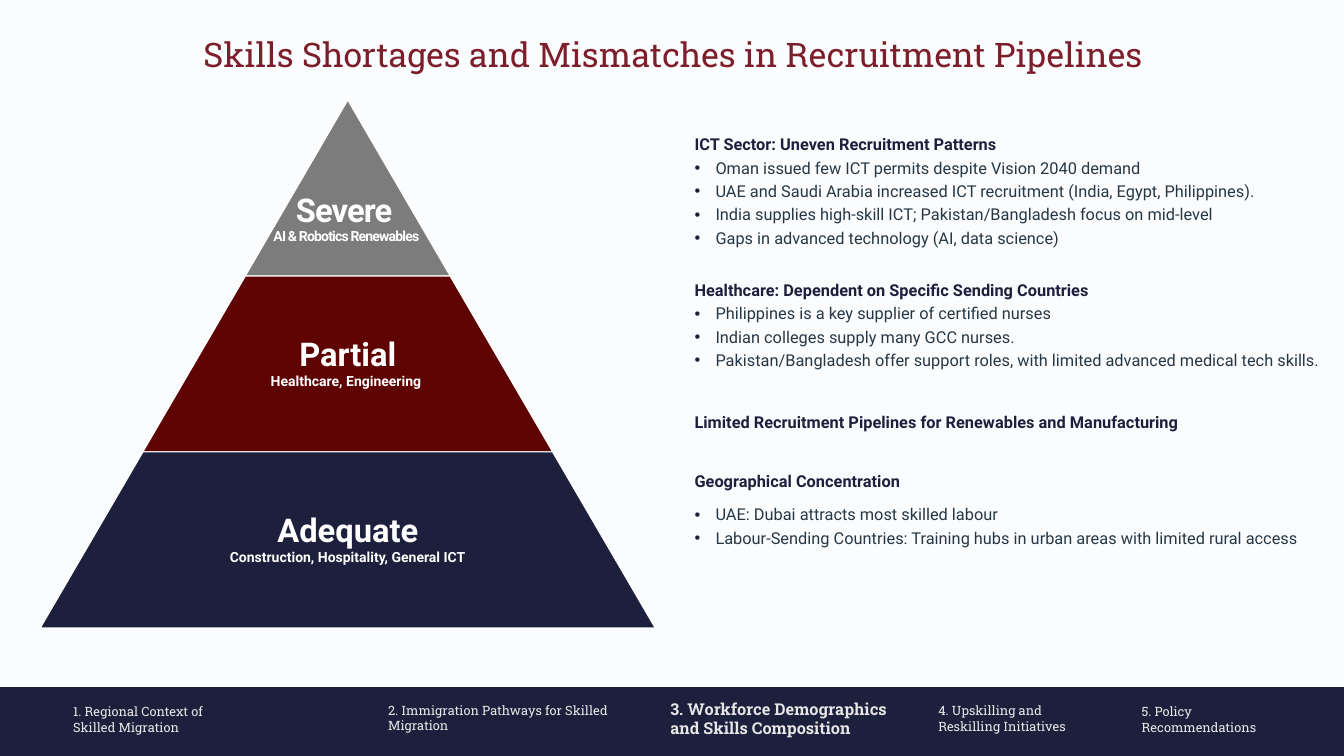
import dataclasses
from typing import Any

import pptx
import pptx.dml.color
import pptx.enum.shapes
import pptx.enum.text
import pptx.oxml
import pptx.oxml.ns
import pptx.util

Pt = pptx.util.Pt
ALIGN = pptx.enum.text.PP_ALIGN
ANCHOR = pptx.enum.text.MSO_ANCHOR
SHAPE = pptx.enum.shapes.MSO_SHAPE

WIDE, HIGH = pptx.util.Inches(16), pptx.util.Inches(9)
COL, ROW = WIDE / 16, HIGH / 9
SANS, SLAB = "Roboto", "Roboto Slab"
HUES = {
    "page": "FBFCFE", "navy": "1D203C", "title": "7D1E2B", "gray": "7C7C7C",
    "wine": "5E0202", "white": "FFFFFF", "pale": "E7E6E6", "body": "253745",
}


@dataclasses.dataclass
class Box:
    """A place on the grid, in columns and rows."""
    left: float
    top: float
    wide: float
    high: float

    def place(self) -> tuple[int, int, int, int]:
        return (round(self.left * COL), round(self.top * ROW),
                round(self.wide * COL), round(self.high * ROW))


@dataclasses.dataclass
class Style:
    size: float
    hue: str
    font: str = SANS
    bold: bool = False
    track: float = 0


@dataclasses.dataclass
class Step:
    text: str
    box: Box
    now: bool = False


@dataclasses.dataclass
class Tier:
    head: str
    note: str
    hue: str
    share: float = 0.65
    drop: float = 0
    track: float = 0


@dataclasses.dataclass
class Topic:
    head: str
    gap: float
    points: list[str]
    lead: float = 3.2


STEPS = [
    Step("1. Regional Context of \nSkilled Migration", Box(0.87, 8.38, 3.27, 0.38)),
    Step("2. Immigration Pathways for Skilled Migration", Box(4.62, 8.36, 2.88, 0.39)),
    Step("3. Workforce Demographics and Skills Composition",
         Box(7.98, 8.32, 2.7, 0.39), now=True),
    Step("4. Upskilling and Reskilling Initiatives", Box(11.17, 8.37, 1.94, 0.39)),
    Step("5. Policy Recommendations", Box(13.59, 8.38, 1.94, 0.39)),
]
TIERS = [
    Tier("Severe ", "AI & Robotics Renewables ", "gray", share=1, drop=0.75, track=-0.7),
    Tier("Partial", "Healthcare, Engineering ", "wine"),
    Tier("Adequate", "Construction, Hospitality, General ICT", "navy"),
]
TOPICS = [
    Topic("ICT Sector: Uneven Recruitment Patterns", 0, [
        "Oman issued few ICT permits despite Vision 2040 demand",
        "UAE and Saudi Arabia increased ICT recruitment (India, Egypt, Philippines).",
        "India supplies high-skill ICT; Pakistan/Bangladesh focus on mid-level",
        "Gaps in advanced technology (AI, data science)"]),
    Topic("Healthcare: Dependent on Specific Sending Countries", 16.4, [
        "Philippines is a key supplier of certified nurses",
        "Indian colleges supply many GCC nurses.",
        "Pakistan/Bangladesh offer support roles, with limited advanced medical tech skills."]),
    Topic("Limited Recruitment Pipelines for Renewables and Manufacturing", 24.6, []),
    Topic("Geographical Concentration", 21.9, [
        "UAE: Dubai attracts most skilled labour",
        "Labour-Sending Countries: Training hubs in urban areas with limited rural access"],
        lead=11.9),
]
MID, PEAK, STEP_W, STEP_H = 4.14, 1.19, 2.44, 2.095
SLOPE = 0.583


def tint(name: str) -> pptx.dml.color.RGBColor:
    return pptx.dml.color.RGBColor.from_string(HUES[name])


def write(para: Any, text: str, style: Style) -> None:
    for i, line in enumerate(text.split("\n")):
        if i:
            para.add_line_break()
        run = para.add_run()
        run.text = line
        run.font.name, run.font.size = style.font, Pt(style.size)
        run.font.bold = style.bold
        run.font.color.rgb = tint(style.hue)
        if style.track:
            run._r.get_or_add_rPr().set("spc", str(round(style.track * 100)))


def text_box(slide: Any, box: Box, inset: float | None = None) -> Any:
    frame = slide.shapes.add_textbox(*box.place()).text_frame
    frame.word_wrap = True
    if inset is not None:
        edge = round(inset * COL)
        frame.margin_left = frame.margin_right = edge
        frame.margin_top = frame.margin_bottom = edge
    return frame


def next_para(frame: Any) -> Any:
    """Give the empty first paragraph, or a new one."""
    first = frame.paragraphs[0]
    return frame.add_paragraph() if first.runs else first


def block(slide: Any, kind: Any, box: Box, hue: str) -> Any:
    shape = slide.shapes.add_shape(kind, *box.place())
    shape.shadow.inherit = False
    shape.fill.solid()
    shape.fill.fore_color.rgb = tint(hue)
    shape.line.fill.background()
    return shape


def bullet(para: Any) -> None:
    props = para._p.get_or_add_pPr()
    dent = round(COL / 4)
    props.set("marL", str(dent))
    props.set("indent", str(-dent))
    space = pptx.oxml.ns.nsdecls("a")
    for part in (f'<a:buClr {space}><a:srgbClr val="{HUES["navy"]}"/></a:buClr>',
                 f'<a:buFont {space} typeface="Arial"/>',
                 f'<a:buChar {space} char="•"/>'):
        props.append(pptx.oxml.parse_xml(part))


def draw_title(slide: Any) -> None:
    title = slide.shapes.title
    title.left, title.top, title.width, title.height = Box(2.1, 0.29, 11.94, 0.62).place()
    frame = title.text_frame
    frame.auto_size = pptx.enum.text.MSO_AUTO_SIZE.NONE
    frame.vertical_anchor = ANCHOR.TOP
    para = frame.paragraphs[0]
    para.alignment, para.line_spacing = ALIGN.CENTER, Pt(39)
    write(para, "Skills Shortages and Mismatches in Recruitment Pipelines ",
          Style(29, "title", SLAB))


def draw_tier(slide: Any, rank: int, tier: Tier) -> None:
    wide, top = STEP_W * (rank + 1), PEAK + STEP_H * rank
    shape = block(slide, SHAPE.TRAPEZOID, Box(MID - wide / 2, top, wide, STEP_H), tier.hue)
    shape.adjustments[0] = SLOPE
    shape.line.color.rgb, shape.line.width = tint("white"), Pt(1)
    inner = wide * tier.share
    frame = text_box(slide, Box(MID - inner / 2, top, inner, STEP_H), 0.04)
    frame.margin_top = round((0.04 + tier.drop) * ROW)
    frame.vertical_anchor = ANCHOR.MIDDLE
    for text, size in ((tier.head, 28), (tier.note, 12)):
        para = next_para(frame)
        para.alignment, para.line_spacing = ALIGN.CENTER, 0.9
        write(para, text, Style(size, "white", bold=True, track=tier.track))


def draw_topic(frame: Any, topic: Topic) -> None:
    para = next_para(frame)
    para.line_spacing, para.space_before = Pt(28.5), Pt(topic.gap)
    write(para, topic.head, Style(14, "navy", bold=True))
    for i, point in enumerate(topic.points):
        para = next_para(frame)
        para.space_before = Pt(3.2 if i else topic.lead)
        bullet(para)
        write(para, point, Style(14, "body"))


def main() -> None:
    deck = pptx.Presentation()
    deck.slide_width, deck.slide_height = WIDE, HIGH
    slide = deck.slides.add_slide(deck.slide_layouts[5])
    slide.background.fill.solid()
    slide.background.fill.fore_color.rgb = tint("page")
    block(slide, SHAPE.RECTANGLE, Box(0, 8.18, 16, 0.82), "navy")
    for step in STEPS:
        style = Style(14 if step.now else 11, "pale", SLAB, step.now)
        write(text_box(slide, step.box, 0).paragraphs[0], step.text, style)
    draw_title(slide)
    for rank, tier in enumerate(TIERS):
        draw_tier(slide, rank, tier)
    frame = text_box(slide, Box(8.17, 1.39, 7.8, 6.45))
    for topic in TOPICS:
        draw_topic(frame, topic)
    deck.save("out.pptx")


if __name__ == "__main__":
    main()
